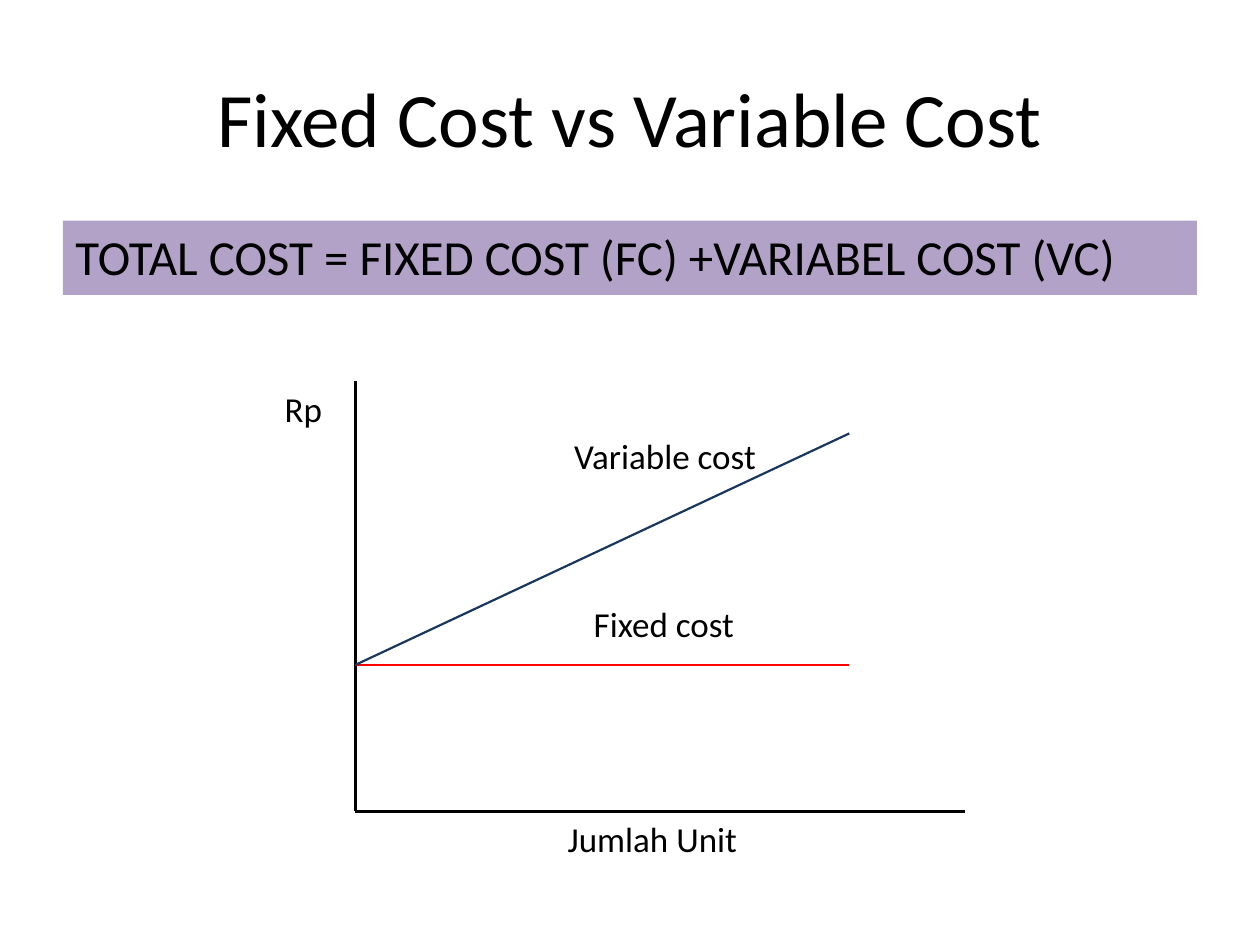
from pptx import Presentation
from pptx.dml.color import RGBColor
from pptx.enum.shapes import MSO_CONNECTOR, MSO_SHAPE
from pptx.enum.text import MSO_ANCHOR, PP_ALIGN
from pptx.oxml.ns import qn
from pptx.util import Pt
from lxml.etree import SubElement

BLACK = RGBColor(0x00, 0x00, 0x00)
RED = RGBColor(0xFF, 0x00, 0x00)
NAVY = RGBColor(0x17, 0x37, 0x5E)
LAVENDER = RGBColor(0xB3, 0xA2, 0xC7)


class SlideBuilder:
    font = "Calibri"
    title_size, formula_size, label_size = 44, 28, 20

    def __init__(self, slide):
        self.slide = slide

    def set_text(self, shape, text, size, align=PP_ALIGN.LEFT, anchor=MSO_ANCHOR.TOP):
        frame = shape.text_frame
        frame.word_wrap = True
        frame.vertical_anchor = anchor
        paragraph = frame.paragraphs[0]
        paragraph.alignment = align
        run = paragraph.add_run()
        run.text = text
        run.font.name = self.font
        run.font.size = Pt(size)
        run.font.color.rgb = BLACK

    def title(self, text, left, top, width, height):
        box = self.slide.shapes.add_textbox(Pt(left), Pt(top), Pt(width), Pt(height))
        self.set_text(box, text, self.title_size, PP_ALIGN.CENTER, MSO_ANCHOR.MIDDLE)

    def label(self, text, left, top, width):
        box = self.slide.shapes.add_textbox(Pt(left), Pt(top), Pt(width), Pt(31.5))
        self.set_text(box, text, self.label_size)

    def banner(self, text, left, top, width, height):
        bar = self.slide.shapes.add_shape(
            MSO_SHAPE.RECTANGLE, Pt(left), Pt(top), Pt(width), Pt(height))
        bar.shadow.inherit = False
        bar.fill.solid()
        bar.fill.fore_color.rgb = LAVENDER
        bar.line.fill.background()
        self.set_text(bar, text, self.formula_size)

    def line(self, start, end, color, weight):
        connector = self.slide.shapes.add_connector(
            MSO_CONNECTOR.STRAIGHT, *map(Pt, start + end))
        connector.line.color.rgb = color
        connector.line.width = Pt(weight)
        SubElement(connector._element.spPr, qn("a:effectLst"))


def main():
    deck = Presentation()
    deck.slide_width, deck.slide_height = Pt(720), Pt(540)
    builder = SlideBuilder(deck.slides.add_slide(deck.slide_layouts[6]))

    margin, content_width = 36, 648
    builder.title("Fixed Cost vs Variable Cost", margin, 21.6, content_width, 90)

    axis_left, axis_top, axis_bottom, axis_right = 203, 218, 463.7, 551.5
    fixed_level, cost_right, variable_top = 380, 485.3, 247.7
    origin = (axis_left, axis_bottom)
    cost_start = (axis_left, fixed_level)
    builder.line((axis_left, axis_top), origin, BLACK, 1.5)
    builder.line(origin, (axis_right, axis_bottom), BLACK, 1.5)
    builder.line(cost_start, (cost_right, fixed_level), RED, 1.25)
    builder.line(cost_start, (cost_right, variable_top), NAVY, 1.25)

    builder.label("Rp", 155.5, axis_top, 90)
    builder.label("Jumlah Unit", 317.3, axis_bottom, 150)
    builder.label("Fixed cost", 332.2, 340.6, 120)
    builder.label("Variable cost", 321, 244.8, 120)

    builder.banner("TOTAL COST = FIXED COST (FC) +VARIABEL COST (VC)",
                   margin, 126, content_width, 42.5)
    deck.save("out.pptx")


if __name__ == "__main__":
    main()
